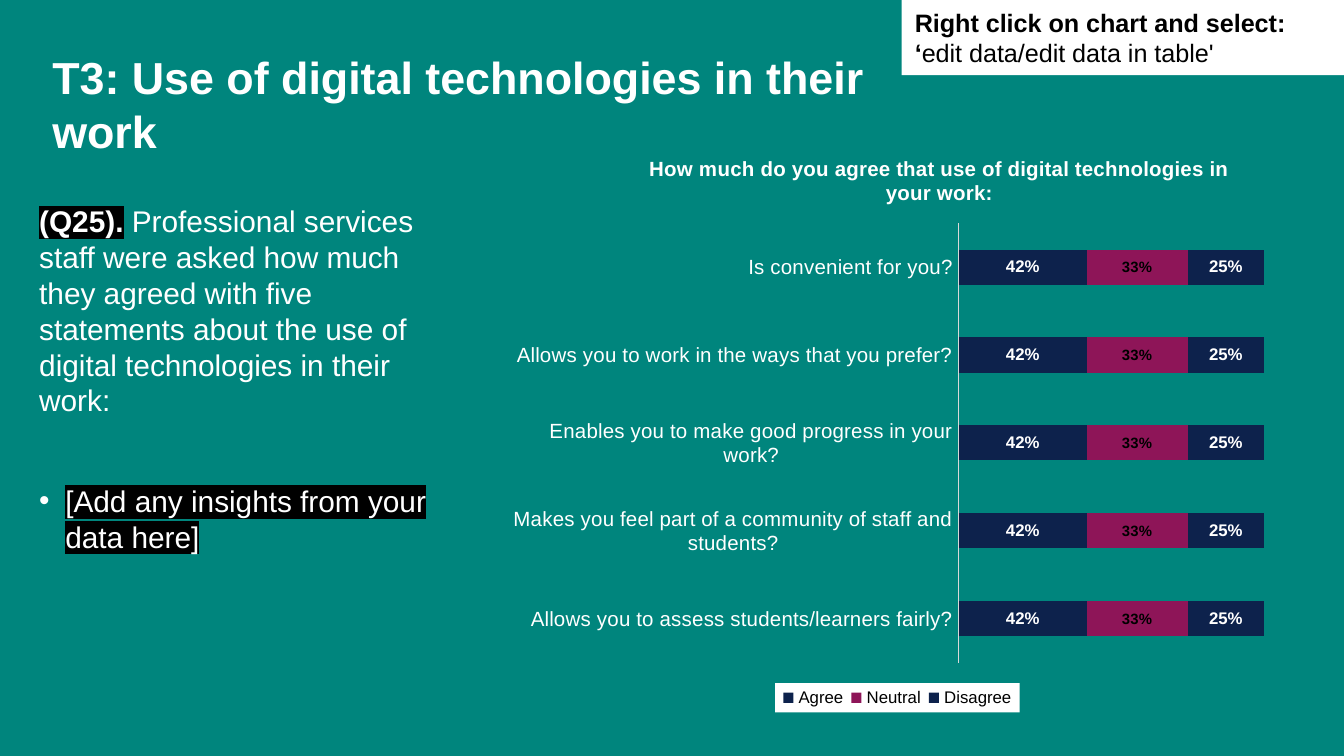
from dataclasses import dataclass

from pptx import Presentation
from pptx.chart.data import CategoryChartData
from pptx.dml.color import RGBColor
from pptx.enum.chart import XL_CHART_TYPE as ChartType
from pptx.enum.chart import XL_LEGEND_POSITION as LegendPosition
from pptx.enum.chart import XL_TICK_LABEL_POSITION as LabelPosition
from pptx.enum.chart import XL_TICK_MARK as TickMark
from pptx.enum.shapes import MSO_SHAPE as Shape
from pptx.enum.text import MSO_ANCHOR as Anchor
from pptx.enum.text import MSO_AUTO_SIZE as AutoSize
from pptx.enum.text import PP_ALIGN as Align
from pptx.oxml import parse_xml
from pptx.oxml.ns import nsdecls, qn
from pptx.util import Pt


@dataclass(frozen=True)
class Theme:
    font: str = "Arial"
    teal: str = "00857D"
    white: str = "FFFFFF"
    black: str = "000000"
    navy: str = "0D224C"
    plum: str = "8E1558"
    grey: str = "D9D9D9"
    title_size: float = 24
    body_size: float = 16
    note_size: float = 13.5
    chart_size: float = 11
    label_size: float = 9
    small_label_size: float = 8


class SlideBuilder:
    def __init__(self, deck, theme):
        self.theme = theme
        self.page = deck.slides.add_slide(deck.slide_layouts[1])
        self.paint(self.page.background.fill, theme.teal)

    def paint(self, fill, color):
        fill.solid()
        fill.fore_color.rgb = RGBColor.from_string(color)

    def style(self, font, size, color, bold=False):
        font.name, font.size, font.bold = self.theme.font, Pt(size), bold
        font.color.rgb = RGBColor.from_string(color)

    def move(self, shape, box):
        shape.left, shape.top, shape.width, shape.height = map(Pt, box)

    def prepare(self, frame, anchor=Anchor.TOP):
        frame.word_wrap, frame.auto_size = True, AutoSize.NONE
        frame.vertical_anchor = anchor

    def clear_margins(self, frame):
        frame.margin_left = frame.margin_right = Pt(0)
        frame.margin_top = frame.margin_bottom = Pt(0)

    def highlight(self, span):
        mark = parse_xml(f'<a:highlight {nsdecls("a")}>'
                         f'<a:srgbClr val="{self.theme.black}"/></a:highlight>')
        span._r.rPr.find(qn("a:solidFill")).addnext(mark)

    def title(self, text, box):
        shape = self.page.shapes.title
        self.move(shape, box)
        frame = shape.text_frame
        self.prepare(frame)
        self.clear_margins(frame)
        frame.text = text
        para = frame.paragraphs[0]
        para.alignment, para.line_spacing = Align.LEFT, 1.0
        for span in para.runs:
            self.style(span.font, self.theme.title_size, self.theme.white, True)

    def body(self, items, box, gap):
        """Items are (bulleted, spans); spans are (text, bold, highlighted)."""
        shape = self.page.placeholders[1]
        self.move(shape, box)
        frame = shape.text_frame
        self.prepare(frame)
        self.clear_margins(frame)
        for number, (bulleted, spans) in enumerate(items):
            para = frame.add_paragraph() if number else frame.paragraphs[0]
            props = para._p.get_or_add_pPr()
            indent = Pt(14) if bulleted else 0
            props.set("marL", str(indent))
            props.set("indent", str(-indent))
            bullet = 'buChar char="•"' if bulleted else "buNone"
            props.append(parse_xml(f'<a:{bullet} {nsdecls("a")}/>'.replace(
                'buChar char="•" ', 'buChar char="•" ')))
            para.line_spacing = 1.0
            para.space_before = Pt(gap if number else 0)
            for text, bold, marked in spans:
                span = para.add_run()
                span.text = text
                self.style(span.font, self.theme.body_size, self.theme.white, bold)
                if marked:
                    self.highlight(span)

    def note(self, spans, box):
        shape = self.page.shapes.add_shape(Shape.RECTANGLE, *map(Pt, box))
        shape.shadow.inherit = False
        self.paint(shape.fill, self.theme.white)
        shape.line.fill.background()
        self.prepare(shape.text_frame, Anchor.MIDDLE)
        para = shape.text_frame.paragraphs[0]
        para.alignment = Align.LEFT
        for text, bold in spans:
            span = para.add_run()
            span.text = text
            self.style(span.font, self.theme.note_size, self.theme.black, bold)

    def place(self, part, x, y, w=None, h=None, after=None, inner=False):
        """Give a chart part a fixed place, in fractions of the chart."""
        for old in part.findall(qn("c:layout")):
            part.remove(old)
        values = {"x": x, "y": y, "w": w, "h": h}
        target = '<c:layoutTarget val="inner"/>' if inner else ""
        modes = '<c:xMode val="edge"/><c:yMode val="edge"/>'
        sizes = "".join(f'<c:{key} val="{value}"/>'
                        for key, value in values.items() if value is not None)
        layout = parse_xml(f'<c:layout {nsdecls("c")}><c:manualLayout>{target}{modes}'
                           f'{sizes}</c:manualLayout></c:layout>')
        part.insert(0, layout)
        if after:
            part.find(qn(after)).addnext(layout)

    def stacked_bars(self, title, categories, series, box):
        """Series are (name, value, fill, label size, label color)."""
        theme = self.theme
        data = CategoryChartData(number_format="0%")
        data.categories = categories
        for name, value, *_ in series:
            data.add_series(name, [value] * len(categories))
        chart = self.page.shapes.add_chart(
            ChartType.BAR_STACKED, *map(Pt, box), data).chart
        self.style(chart.font, 10, theme.black)

        # Bars and their labels
        plot = chart.plots[0]
        plot.gap_width, plot.overlap, plot.vary_by_categories = 150, 100, False
        for bars, (_, _, fill, size, color) in zip(plot.series, series):
            self.paint(bars.format.fill, fill)
            labels = bars.data_labels
            labels.show_value = True
            labels.number_format, labels.number_format_is_linked = "0%", False
            self.style(labels.font, size, color, True)

        # Axes
        axis = chart.category_axis
        axis.reverse_order = True
        axis.major_tick_mark = axis.minor_tick_mark = TickMark.NONE
        axis.tick_label_position = LabelPosition.NEXT_TO_AXIS
        axis.format.line.width = Pt(1)
        axis.format.line.color.rgb = RGBColor.from_string(theme.grey)
        self.style(axis.tick_labels.font, theme.chart_size, theme.white)
        scale = chart.value_axis
        scale.minimum_scale, scale.maximum_scale = 0, 1
        scale.has_major_gridlines = scale.visible = False

        # Title and legend
        chart.has_title = True
        frame = chart.chart_title.text_frame
        frame.text = title
        heading = frame.paragraphs[0].runs[0]
        self.style(heading.font, theme.chart_size, theme.white, True)
        chart.has_legend = True
        legend = chart.legend
        legend.position, legend.include_in_layout = LegendPosition.BOTTOM, False
        self.style(legend.font, theme.label_size, theme.black)

        # Legend fill and positions
        root = chart._chartSpace
        legend_part = root.xpath(".//c:legend")[0]
        legend_part.find(qn("c:txPr")).addprevious(parse_xml(
            f'<c:spPr {nsdecls("c", "a")}><a:solidFill>'
            f'<a:srgbClr val="{theme.white}"/></a:solidFill></c:spPr>'))
        self.place(legend_part, 0.34, 0.95, 0.32, 0.05, after="c:legendPos")
        self.place(root.xpath(".//c:title")[0], 0.17, 0.03, after="c:tx")
        self.place(root.xpath(".//c:plotArea")[0], 0.58, 0.155, 0.4, 0.755, inner=True)


def main():
    deck = Presentation()
    deck.slide_width, deck.slide_height = Pt(720), Pt(405)
    theme = Theme()
    slide = SlideBuilder(deck, theme)

    # Title and commentary
    slide.title("T3: Use of digital technologies in their \vwork", (28, 26.6, 513.4, 26.6))
    slide.body([
        (False, [("(Q25).", True, True),
                 (" Professional services staff were asked how much they agreed with five "
                  "statements about the use of digital technologies in their work:",
                  False, False)]),
        (True, [("[Add any insights from your data here]", False, True)]),
    ], (21, 108.7, 219, 237.6), gap=34.6)

    # Survey chart
    slide.stacked_bars(
        "How much do you agree that use of digital technologies in your work:",
        ["Is convenient for you?",
         "Allows you to work in the ways that you prefer?",
         "Enables you to make good progress in your work?",
         "Makes you feel part of a community of staff and students?",
         "Allows you to assess students/learners fairly?"],
        [("Agree", 0.42, theme.navy, theme.label_size, theme.white),
         ("Neutral", 0.33, theme.plum, theme.small_label_size, theme.black),
         ("Disagree", 0.25, theme.navy, theme.label_size, theme.white)],
        (275, 71.3, 410.4, 311.8))

    # Editing hint
    slide.note([("Right click on chart and select: ‘", True),
                ("edit data/edit data in table'", False)], (483, 0, 237, 40.3))
    deck.save("out.pptx")


if __name__ == "__main__":
    main()
